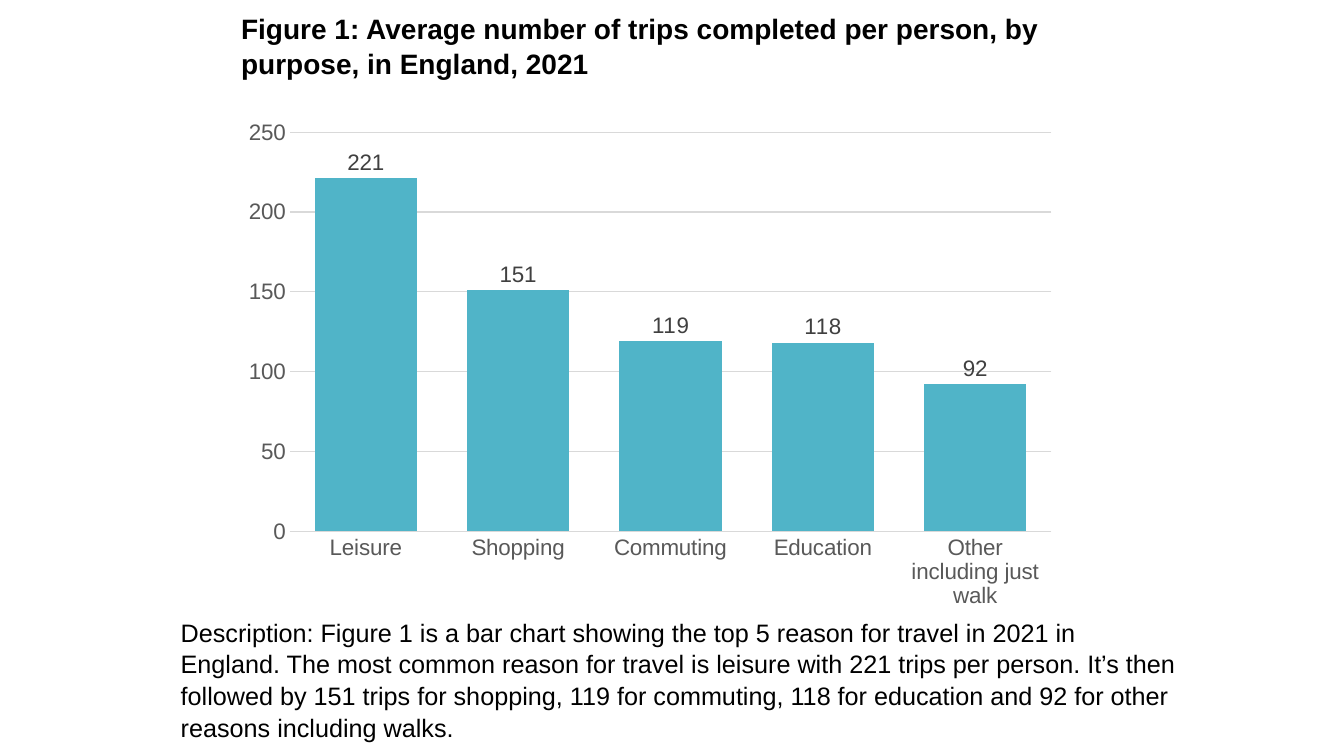
from lxml.etree import SubElement
from pptx import Presentation
from pptx.chart.data import CategoryChartData
from pptx.dml.color import RGBColor
from pptx.enum.chart import XL_CHART_TYPE, XL_LABEL_POSITION, XL_TICK_MARK
from pptx.enum.text import MSO_ANCHOR, PP_ALIGN
from pptx.oxml.ns import qn
from pptx.util import Pt

FONT = "Arial"
BLACK, GRID_GREY, AXIS_GREY, LABEL_GREY, TEAL = (
    "000000", "D9D9D9", "595959", "404040", "50B4C8")

TRIPS = {
    "Leisure": 221,
    "Shopping": 151,
    "Commuting": 119,
    "Education": 118,
    "Other including just walk": 92,
}
HEADING = ("Figure 1: Average number of trips completed per person, "
           "by purpose, in England, 2021")
DESCRIPTION = (
    "Description: Figure 1 is a bar chart showing the top 5 reason for travel "
    "in 2021 in England. The most common reason for travel is leisure with 221 "
    "trips per person. It’s then followed by 151 trips for shopping, 119 for "
    "commuting, 118 for education and 92 for other reasons including walks.")


def colour(hex_code):
    return RGBColor.from_string(hex_code)


def style_font(font, size, hex_code, bold=False):
    font.name, font.size, font.bold = FONT, Pt(size), bold
    font.color.rgb = colour(hex_code)


def fill_text(frame, text, size, anchor, bold=False):
    frame.word_wrap = True
    frame.vertical_anchor = anchor
    paragraph = frame.paragraphs[0]
    paragraph.alignment = PP_ALIGN.LEFT
    paragraph.line_spacing = 1.05
    run = paragraph.add_run()
    run.text = text
    style_font(run.font, size, BLACK, bold)


def add_heading(slide, left, top, width, height):
    heading = slide.shapes.title
    heading.left, heading.top = Pt(left), Pt(top)
    heading.width, heading.height = Pt(width), Pt(height)
    fill_text(heading.text_frame, HEADING, 20, MSO_ANCHOR.TOP, bold=True)


def add_description(slide, left, top, width, height):
    description = slide.shapes.add_textbox(Pt(left), Pt(top), Pt(width), Pt(height))
    fill_text(description.text_frame, DESCRIPTION, 18, MSO_ANCHOR.MIDDLE)


def place_plot(chart, **fractions):
    """Fix the inner plot area as fractions of the chart's box."""
    plot_area = chart.plots[0]._element.getparent()
    layout = plot_area.find(qn("c:layout"))
    if layout is None:
        layout = SubElement(plot_area, qn("c:layout"))
        plot_area.insert(0, layout)
    manual = SubElement(layout, qn("c:manualLayout"))
    settings = {"layoutTarget": "inner", "xMode": "edge", "yMode": "edge", **fractions}
    for tag, value in settings.items():
        SubElement(manual, qn(f"c:{tag}")).set("val", str(value))


def add_trips_chart(slide, left, top, width, height):
    data = CategoryChartData()
    data.categories = list(TRIPS)
    data.add_series("Series 1", list(TRIPS.values()))
    chart = slide.shapes.add_chart(
        XL_CHART_TYPE.COLUMN_CLUSTERED,
        Pt(left), Pt(top), Pt(width), Pt(height), data).chart
    chart.has_legend = chart.has_title = False
    style_font(chart.font, 16, BLACK)
    place_plot(chart, x=0.07, y=0.04, w=0.91, h=0.79)

    # Axes
    purposes, counts = chart.category_axis, chart.value_axis
    for axis in (purposes, counts):
        axis.major_tick_mark = axis.minor_tick_mark = XL_TICK_MARK.NONE
        style_font(axis.tick_labels.font, 16, AXIS_GREY)
    counts.minimum_scale, counts.maximum_scale, counts.major_unit = 0, 250, 50
    counts.has_major_gridlines = True
    counts.format.line.fill.background()
    for line in (purposes.format.line, counts.major_gridlines.format.line):
        line.color.rgb = colour(GRID_GREY)
        line.width = Pt(0.75)

    # Columns and their values
    columns = chart.plots[0]
    columns.gap_width = 49
    columns.vary_by_categories = False
    trips = columns.series[0]
    trips.format.fill.solid()
    trips.format.fill.fore_color.rgb = colour(TEAL)
    labels = trips.data_labels
    labels.show_value = True
    labels.position = XL_LABEL_POSITION.OUTSIDE_END
    style_font(labels.font, 16, LABEL_GREY)


def main():
    deck = Presentation()
    deck.slide_width, deck.slide_height = Pt(960), Pt(540)
    slide = deck.slides.add_slide(deck.slide_layouts[5])
    add_trips_chart(slide, 165, 80, 598, 361)
    add_description(slide, 122, 433.5, 728, 103)
    add_heading(slide, 165, 3.5, 590, 55.5)
    deck.save("out.pptx")


if __name__ == "__main__":
    main()
